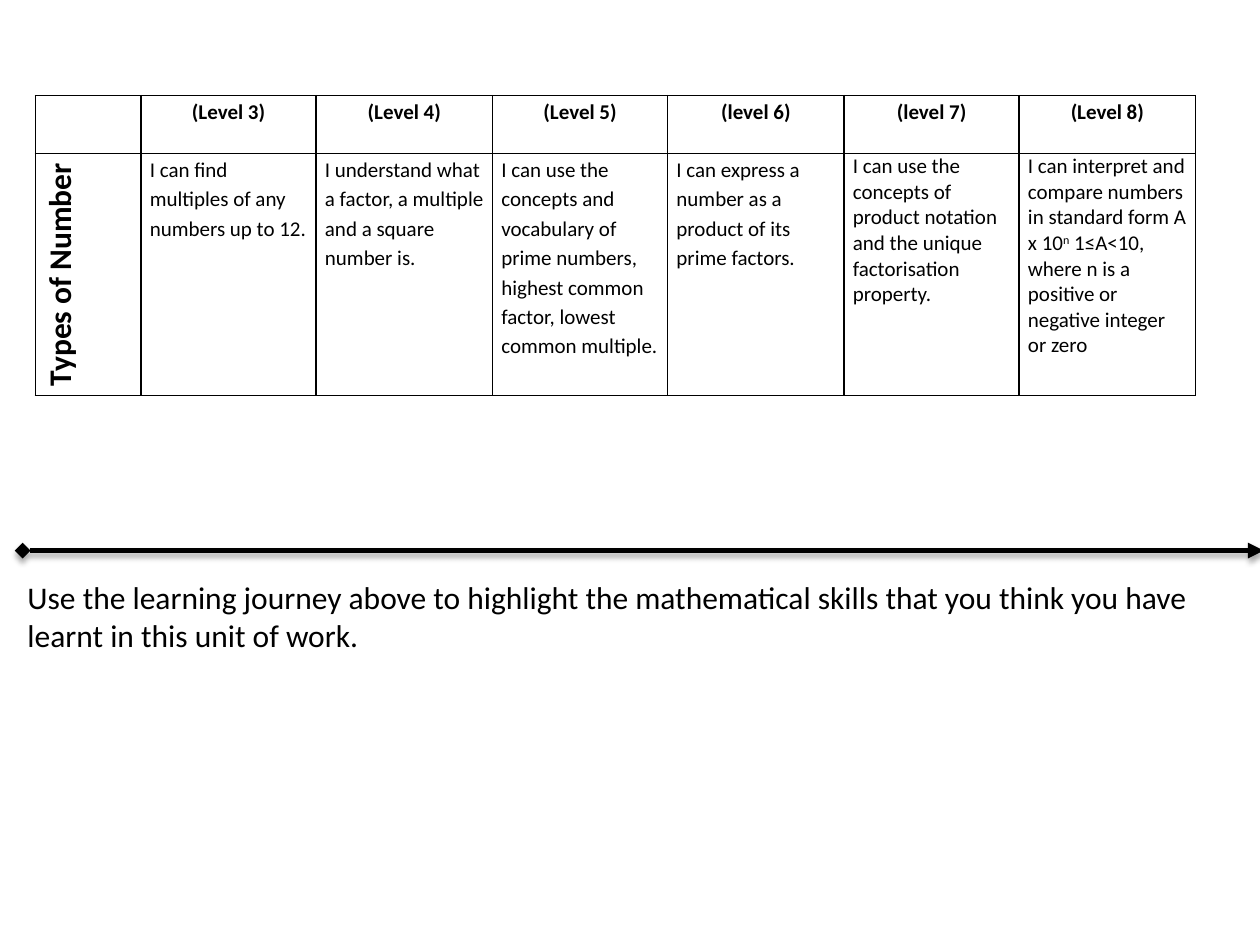
from lxml import etree
from pptx import Presentation
from pptx.dml.color import RGBColor
from pptx.enum.shapes import MSO_CONNECTOR
from pptx.enum.text import MSO_ANCHOR, PP_ALIGN
from pptx.oxml import parse_xml
from pptx.oxml.ns import nsdecls, qn
from pptx.util import Inches, Pt

BLACK = RGBColor(0, 0, 0)
STRAIGHT = MSO_CONNECTOR.STRAIGHT
CENTER, LEFT = PP_ALIGN.CENTER, PP_ALIGN.LEFT
TOP, MIDDLE = MSO_ANCHOR.TOP, MSO_ANCHOR.MIDDLE

HEADER = {"size": Pt(12), "bold": True}
BODY = {"size": Pt(12), "bold": False}
ROW_TITLE = {"size": Pt(18), "bold": True}
NOTE = {"size": Pt(18), "bold": False}

LEVELS = [
    ("(Level 3)", ["I can find multiples of any numbers up to 12."], 1.15),
    ("(Level 4)", ["I understand what a factor, a multiple and a square number is."], 1.15),
    ("(Level 5)", ["I can use the concepts and vocabulary of prime numbers, "
                   "highest common factor, lowest common multiple."], 1.15),
    ("(level 6)", ["I can express a number as a product of its prime factors."], 1.15),
    ("(level 7)", ["I can use the concepts of product notation and the unique "
                   "factorisation property."], 1.0),
    ("(Level 8)", ["I can interpret and compare numbers in standard form A x 10", "n",
                   " 1≤A<10, where n is a positive or negative integer or zero"], 1.0),
]
COLUMN_WIDTHS = [0.84] + [1.39, 1.4] * 3
ROW_HEIGHTS = [0.46, 1.92]


class SlideBuilder:
    def __init__(self, page, font_name, color):
        self.page = page
        self.font_name = font_name
        self.color = color

    def fill_paragraph(self, para, texts, font, align=LEFT, spacing=1.0):
        para.alignment = align
        para.line_spacing = spacing
        for index, text in enumerate(texts):
            span = para.add_run()
            span.text = text
            for name, value in {"name": self.font_name, **font}.items():
                setattr(span.font, name, value)
            span.font.color.rgb = self.color
            if index % 2:
                span.font._element.set("baseline", "30000")

    def text(self, left, top, width, height, text, font):
        box = self.page.shapes.add_textbox(
            Inches(left), Inches(top), Inches(width), Inches(height))
        box.text_frame.word_wrap = True
        self.fill_paragraph(box.text_frame.paragraphs[0], [text], font)

    def table(self, left, top, widths, heights):
        table = self.page.shapes.add_table(
            len(heights), len(widths), Inches(left), Inches(top),
            Inches(sum(widths)), Inches(sum(heights))).table
        table.first_row = table.horz_banding = False
        for column, width in zip(table.columns, widths):
            column.width = Inches(width)
        for row, height in zip(table.rows, heights):
            row.height = Inches(height)
        for cell in table.iter_cells():
            self.style_cell(cell)
        return table

    def style_cell(self, cell):
        margins = {"margin_left": 0.07, "margin_top": 0,
                   "margin_right": 0.07, "margin_bottom": 0}
        for name, value in margins.items():
            setattr(cell, name, Inches(value))
        properties = cell._tc.get_or_add_tcPr()
        for side in "LRTB":
            properties.append(parse_xml(
                f'<a:ln{side} {nsdecls("a")} w="{Pt(1)}"><a:solidFill>'
                f'<a:srgbClr val="{self.color}"/></a:solidFill></a:ln{side}>'))
        cell.fill.background()

    def cell(self, cell, texts, font, align=LEFT, spacing=1.15, vertical=False):
        self.fill_paragraph(cell.text_frame.paragraphs[0], texts, font, align, spacing)
        cell.vertical_anchor = MIDDLE if vertical else TOP
        if vertical:
            cell._tc.get_or_add_tcPr().set("vert", "vert270")

    def arrow(self, start, end, top, width):
        arrow = self.page.shapes.add_connector(
            STRAIGHT, Inches(start), Inches(top), Inches(end), Inches(top))
        arrow.line.color.rgb = self.color
        arrow.line.width = Pt(width)
        line = arrow.line._get_or_add_ln()
        for tag, kind in {"a:headEnd": "diamond", "a:tailEnd": "triangle"}.items():
            etree.SubElement(line, qn(tag), type=kind)
        line.getparent().append(parse_xml(
            f'<a:effectLst {nsdecls("a")}><a:outerShdw blurRad="{Pt(3.1)}" '
            f'dist="{Pt(1.8)}" dir="5400000" rotWithShape="0">'
            f'<a:srgbClr val="{self.color}"><a:alpha val="35000"/></a:srgbClr>'
            '</a:outerShdw></a:effectLst>'))


def main():
    deck = Presentation()
    deck.slide_width, deck.slide_height = Inches(10), Inches(7.5)
    page = deck.slides.add_slide(deck.slide_layouts[6])
    builder = SlideBuilder(page, "Calibri", BLACK)

    builder.text(0.12, 4.54, 9.76, 1.01,
                 "Use the learning journey above to highlight the mathematical skills "
                 "that you think you have learnt in this unit of work.", NOTE)
    table = builder.table(0.28, 0.76, COLUMN_WIDTHS, ROW_HEIGHTS)
    builder.cell(table.cell(1, 0), ["Types of Number"], ROW_TITLE, CENTER, vertical=True)
    for column, (level, skill, spacing) in enumerate(LEVELS, start=1):
        builder.cell(table.cell(0, column), [level], HEADER, CENTER)
        builder.cell(table.cell(1, column), skill, BODY, spacing=spacing)
    builder.arrow(0.18, 10.03, 4.37, 3)

    deck.save("out.pptx")


if __name__ == "__main__":
    main()
